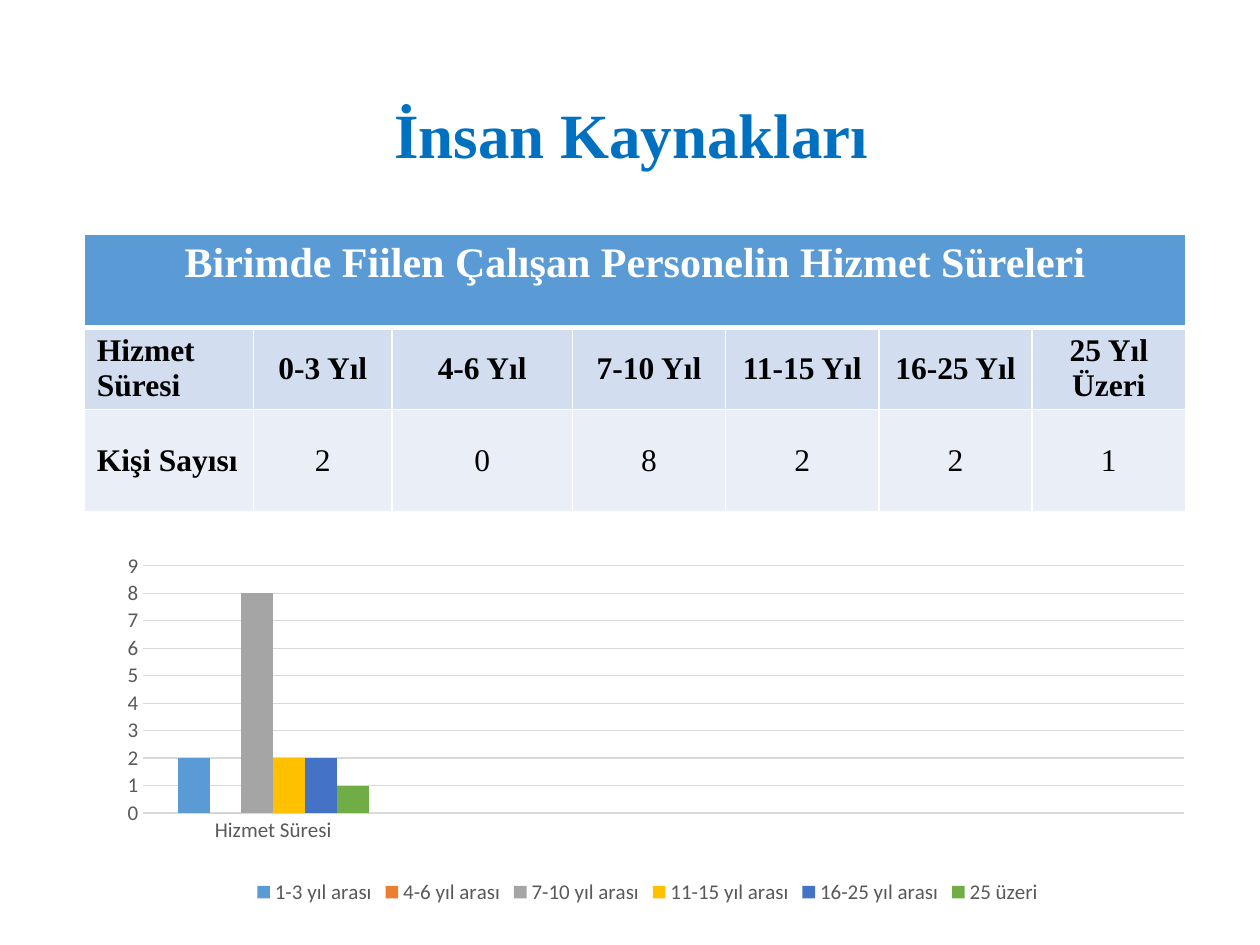
"""Build the staff service-length slide with its table and column chart."""
from dataclasses import dataclass

from lxml.etree import SubElement
from pptx import Presentation
from pptx.chart.data import CategoryChartData
from pptx.dml.color import RGBColor
from pptx.enum.chart import XL_CHART_TYPE, XL_LEGEND_POSITION, XL_TICK_MARK
from pptx.enum.text import MSO_ANCHOR, MSO_AUTO_SIZE, PP_ALIGN
from pptx.oxml.ns import qn
from pptx.util import Pt

SERIF = "Times New Roman"
COLUMN_WIDTHS = (96.5, 79.2, 103, 87.6, 87.6, 87.6, 87.6)
ROW_HEIGHTS = (53, 47, 58.3)
PLOT_LAYOUT = {"layoutTarget": "inner", "xMode": "edge", "yMode": "edge",
               "x": "0.042", "y": "0.059", "w": "0.945", "h": "0.677"}


@dataclass
class Group:
    heading: str
    series: str
    people: int
    color: str


GROUPS = (
    Group("0-3 Yıl", "1-3 yıl arası", 2, "5B9BD5"),
    Group("4-6 Yıl", "4-6 yıl arası", 0, "ED7D31"),
    Group("7-10 Yıl", "7-10 yıl arası", 8, "A5A5A5"),
    Group("11-15 Yıl", "11-15 yıl arası", 2, "FFC000"),
    Group("16-25 Yıl", "16-25 yıl arası", 2, "4472C4"),
    Group("25 Yıl Üzeri", "25 üzeri", 1, "70AD47"),
)


def color_of(value: str) -> RGBColor:
    return RGBColor.from_string(value)


def apply(target, values: dict) -> None:
    for name, value in values.items():
        setattr(target, name, value)


def style_font(font, name: str, size: float, color: str, bold: bool = False) -> None:
    apply(font, {"name": name, "size": Pt(size), "bold": bold})
    font.color.rgb = color_of(color)


def write(para, text: str, size: float, color: str, bold: bool, align) -> None:
    span = para.add_run()
    span.text = text
    para.alignment = align
    style_font(span.font, SERIF, size, color, bold)


def add_title(page) -> None:
    box = page.shapes.title
    apply(box, {"left": Pt(36.7), "top": Pt(20.9), "width": Pt(648), "height": Pt(85)})
    frame = box.text_frame
    apply(frame, {"vertical_anchor": MSO_ANCHOR.MIDDLE, "auto_size": MSO_AUTO_SIZE.NONE,
                  "word_wrap": True, "margin_top": Pt(34.6)})
    para = frame.paragraphs[0]
    para.line_spacing = 0.9
    write(para, "İnsan Kaynakları", 36, "0070C0", True, PP_ALIGN.CENTER)


def set_borders(cell, widths: dict[str, float]) -> None:
    properties = cell._tc.get_or_add_tcPr()
    for position, (side, width) in enumerate(widths.items()):
        line = properties.makeelement(qn(f"a:{side}"), {"w": str(Pt(width))})
        properties.insert(position, line)
        fill = SubElement(line, qn("a:solidFill"))
        SubElement(fill, qn("a:srgbClr"), val="FFFFFF")


def fill_cell(cell, text: str, fill: str, size: float = 18, color: str = "000000",
              bold: bool = True, align=PP_ALIGN.CENTER, bottom: float = 2.5) -> None:
    apply(cell, {"vertical_anchor": MSO_ANCHOR.MIDDLE, "margin_left": Pt(7),
                 "margin_right": Pt(7), "margin_top": Pt(2.5), "margin_bottom": Pt(bottom)})
    cell.fill.solid()
    cell.fill.fore_color.rgb = color_of(fill)
    frame = cell.text_frame
    for number, line in enumerate(text.split("\n")):
        para = frame.add_paragraph() if number else frame.paragraphs[0]
        write(para, line, size, color, bold, align)


def add_service_table(page) -> None:
    shape = page.shapes.add_table(len(ROW_HEIGHTS), len(COLUMN_WIDTHS), Pt(48.4), Pt(134),
                                  Pt(sum(COLUMN_WIDTHS)), Pt(sum(ROW_HEIGHTS)))
    table = shape.table
    for column, width in zip(table.columns, COLUMN_WIDTHS):
        column.width = Pt(width)
    for row, height in zip(table.rows, ROW_HEIGHTS):
        row.height = Pt(height)
    header = table.cell(0, 0)
    header.merge(table.cell(0, len(GROUPS)))
    fill_cell(header, "Birimde Fiilen Çalışan Personelin Hizmet Süreleri", "5B9BD5",
              24, "FFFFFF", bottom=22)
    fill_cell(table.cell(1, 0), "Hizmet\nSüresi", "D2DEEF", align=PP_ALIGN.LEFT)
    fill_cell(table.cell(2, 0), "Kişi Sayısı", "EAEFF7", align=PP_ALIGN.LEFT)
    for number, group in enumerate(GROUPS, start=1):
        fill_cell(table.cell(1, number), group.heading, "D2DEEF")
        fill_cell(table.cell(2, number), str(group.people), "EAEFF7", bold=False)
    for index, row in enumerate(table.rows):
        for cell in row.cells:
            set_borders(cell, {"lnL": 1, "lnR": 1, "lnT": 3 if index == 1 else 1,
                               "lnB": 3 if index == 0 else 1})


def set_plot_layout(chart) -> None:
    area = chart._chartSpace.chart.plotArea
    for old in area.findall(qn("c:layout")):
        area.remove(old)
    layout = area.makeelement(qn("c:layout"), {})
    area.insert(0, layout)
    manual = SubElement(layout, qn("c:manualLayout"))
    for name, value in PLOT_LAYOUT.items():
        SubElement(manual, qn(f"c:{name}"), val=value)


def style_line(line, color: str) -> None:
    line.width = Pt(0.75)
    line.color.rgb = color_of(color)


def add_service_chart(page) -> None:
    data = CategoryChartData()
    data.categories = ("Hizmet Süresi", "", "", "")
    for group in GROUPS:
        data.add_series(group.series, (group.people, None, None, None))
    chart = page.shapes.add_chart(XL_CHART_TYPE.COLUMN_CLUSTERED, Pt(55.4), Pt(311),
                                  Pt(629.3), Pt(208.8), data).chart
    style_font(chart.font, "Calibri", 10, "000000")
    apply(chart, {"has_title": False, "has_legend": True})
    apply(chart.legend, {"position": XL_LEGEND_POSITION.BOTTOM, "include_in_layout": False})
    style_font(chart.legend.font, "Calibri", 12, "595959")
    plot = chart.plots[0]
    apply(plot, {"gap_width": 219, "vary_by_categories": False})
    for series, group in zip(plot.series, GROUPS):
        series.format.fill.solid()
        series.format.fill.fore_color.rgb = color_of(group.color)
    for axis in (chart.category_axis, chart.value_axis):
        apply(axis, {"major_tick_mark": XL_TICK_MARK.NONE, "minor_tick_mark": XL_TICK_MARK.NONE})
        style_font(axis.tick_labels.font, "Calibri", 12, "595959")
    style_line(chart.category_axis.format.line, "D9D9D9")
    values = chart.value_axis
    apply(values, {"minimum_scale": 0, "maximum_scale": 9, "major_unit": 1,
                   "has_major_gridlines": True})
    style_line(values.major_gridlines.format.line, "D9D9D9")
    values.format.line.fill.background()
    set_plot_layout(chart)


def main() -> None:
    deck = Presentation()
    apply(deck, {"slide_width": Pt(720), "slide_height": Pt(540)})
    page = deck.slides.add_slide(deck.slide_layouts.get_by_name("Title Only"))
    add_title(page)
    add_service_table(page)
    add_service_chart(page)
    deck.save("out.pptx")


if __name__ == "__main__":
    main()
